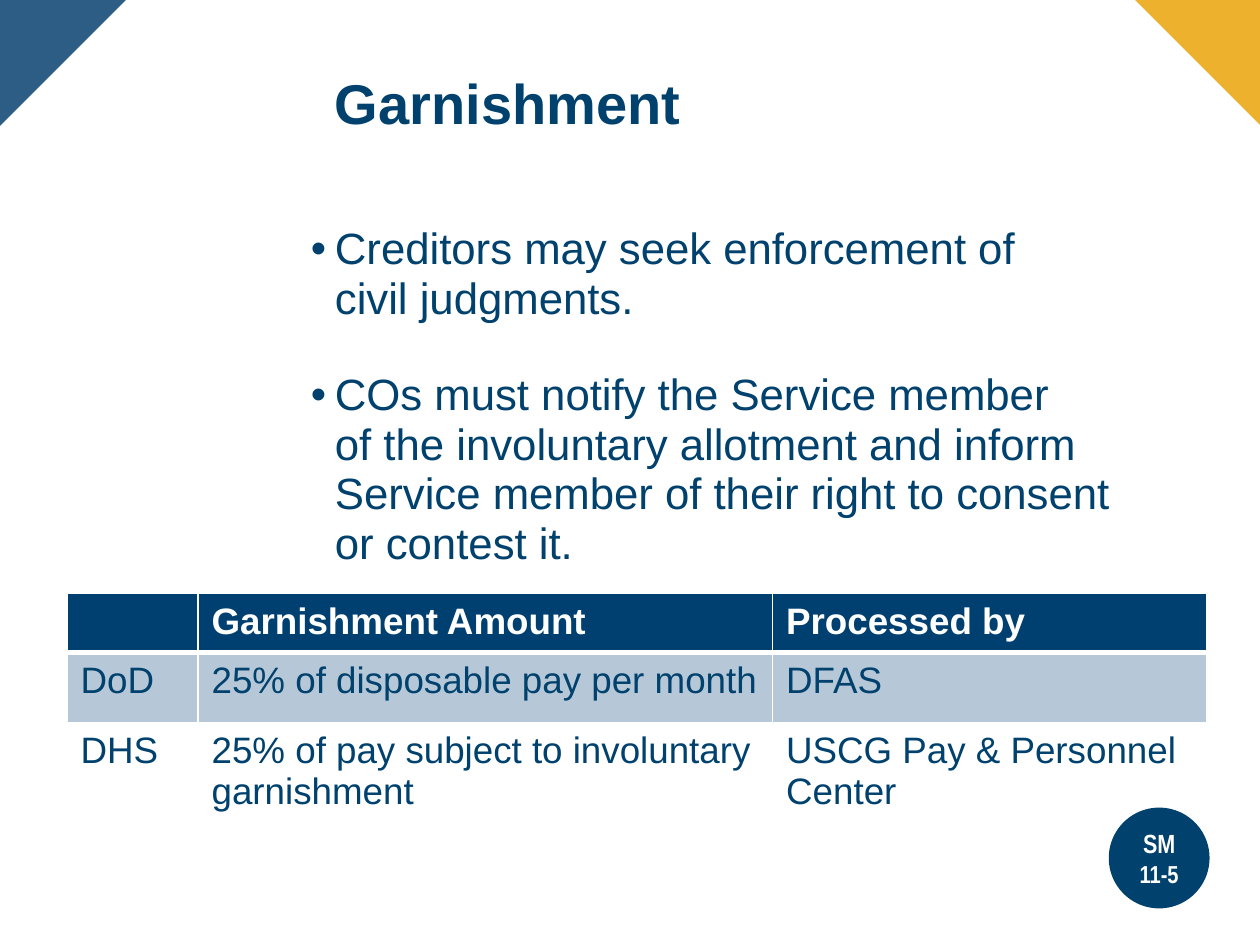
from lxml.etree import SubElement
from pptx import Presentation
from pptx.dml.color import RGBColor
from pptx.enum.shapes import MSO_SHAPE as Preset
from pptx.enum.text import MSO_ANCHOR as Anchor, PP_ALIGN as Align
from pptx.oxml.ns import qn
from pptx.util import Inches, Pt

NAVY = RGBColor(0x00, 0x41, 0x6D)
HEADER = RGBColor(0x00, 0x40, 0x71)
BLUE = RGBColor(0x2D, 0x5C, 0x85)
GOLD = RGBColor(0xED, 0xB1, 0x2E)
BAND = RGBColor(0xB6, 0xC8, 0xD7)
WHITE = RGBColor(0xFF, 0xFF, 0xFF)

BULLETS = [
    ["Creditors may seek enforcement of ", "civil judgments."],
    [
        "COs must notify the Service member ",
        "of the involuntary allotment and inform ",
        "Service member of their right to consent ",
        "or contest it.",
    ],
]
ROWS = [
    ["", "Garnishment Amount", "Processed by"],
    ["DoD", "25% of disposable pay per month", "DFAS"],
    ["DHS", "25% of pay subject to involuntary garnishment", "USCG Pay & Personnel Center"],
]
ROW_FILLS = [HEADER, BAND, WHITE]
COLUMN_WIDTHS = [1.04, 4.56, 3.45]
ROW_HEIGHTS = [0.46, 0.56, 0.82]


def inches(box):
    return [Inches(length) for length in box]


def add_run(paragraph, text, size, color=NAVY, bold=False, name="Arial"):
    run = paragraph.add_run()
    run.text = text
    run.font.size = Pt(size)
    run.font.name = name
    run.font.bold = bold
    run.font.color.rgb = color


def add_text_frame(slide, box):
    text_frame = slide.shapes.add_textbox(*inches(box)).text_frame
    text_frame.word_wrap = True
    return text_frame


def add_filled_shape(slide, preset, box, color, rotation=0):
    shape = slide.shapes.add_shape(preset, *inches(box))
    shape.shadow.inherit = False
    shape.fill.solid()
    shape.fill.fore_color.rgb = color
    shape.line.fill.background()
    shape.rotation = rotation


def add_corners(slide, box):
    left, top, width, size = box
    right = left + width - size
    add_filled_shape(slide, Preset.RIGHT_TRIANGLE, (right, top, size, size), GOLD, 180)
    add_filled_shape(slide, Preset.RIGHT_TRIANGLE, (left, top, size, size), BLUE, 90)


def add_title(slide, box):
    text_frame = add_text_frame(slide, box)
    text_frame.vertical_anchor = Anchor.BOTTOM
    paragraph = text_frame.paragraphs[0]
    paragraph.line_spacing = 0.9
    add_run(paragraph, "Garnishment", 32, bold=True)


def add_bullets(slide, box):
    text_frame = add_text_frame(slide, box)
    for index, lines in enumerate(BULLETS):
        paragraph = text_frame.add_paragraph() if index else text_frame.paragraphs[0]
        paragraph.line_spacing = 0.94
        if index:
            paragraph.space_before = Pt(27)
        properties = paragraph._p.get_or_add_pPr()
        properties.set("marL", str(Inches(0.19)))
        properties.set("indent", str(-Inches(0.19)))
        SubElement(properties, qn("a:buFont"), typeface="Arial")
        SubElement(properties, qn("a:buChar"), char="•")
        for line_index, line in enumerate(lines):
            if line_index:
                paragraph.add_line_break()
            add_run(paragraph, line, 25)


def set_borders(cell, bottom_width):
    properties = cell._tc.get_or_add_tcPr()
    widths = {"a:lnL": 1, "a:lnR": 1, "a:lnT": 1, "a:lnB": bottom_width}
    for position, (tag, width) in enumerate(widths.items()):
        line = SubElement(properties, qn(tag), w=str(Pt(width)))
        fill = SubElement(line, qn("a:solidFill"))
        SubElement(fill, qn("a:srgbClr"), val=str(WHITE))
        properties.insert(position, line)


def add_garnishment_table(slide, box):
    table = slide.shapes.add_table(len(ROWS), len(COLUMN_WIDTHS), *inches(box)).table
    for column, width in zip(table.columns, COLUMN_WIDTHS):
        column.width = Inches(width)
    for row_index, texts in enumerate(ROWS):
        header = row_index == 0
        table.rows[row_index].height = Inches(ROW_HEIGHTS[row_index])
        for column_index, text in enumerate(texts):
            cell = table.cell(row_index, column_index)
            cell.margin_left = cell.margin_right = Inches(0.11)
            cell.margin_top = cell.margin_bottom = Inches(0.06)
            cell.fill.solid()
            cell.fill.fore_color.rgb = ROW_FILLS[row_index]
            set_borders(cell, 3 if header else 1)
            if text:
                color = WHITE if header else NAVY
                add_run(cell.text_frame.paragraphs[0], text, 21, color, header)


def add_page_badge(slide, box):
    left, top, width, height = box
    add_filled_shape(slide, Preset.OVAL, box, NAVY)
    text_frame = add_text_frame(slide, (left, top + 0.11, width, height - 0.21))
    paragraph = text_frame.paragraphs[0]
    paragraph.alignment = Align.CENTER
    add_run(paragraph, "SM", 15, WHITE, True, "Arial Narrow")
    paragraph.add_line_break()
    add_run(paragraph, "11-5", 14, WHITE, True, "Arial Narrow")


def main():
    presentation = Presentation()
    presentation.slide_width = Inches(10)
    presentation.slide_height = Inches(7.5)
    slide = presentation.slides.add_slide(presentation.slide_layouts[6])
    add_corners(slide, (0, 0, 10.01, 1))
    add_title(slide, (2.56, 0.18, 7.1, 0.95))
    add_bullets(slide, (2.37, 1.74, 7.64, 2.95))
    add_garnishment_table(slide, (0.53, 4.71, 9.05, 1.84))
    add_page_badge(slide, (8.8, 6.41, 0.8, 0.8))
    presentation.save("out.pptx")


if __name__ == "__main__":
    main()
